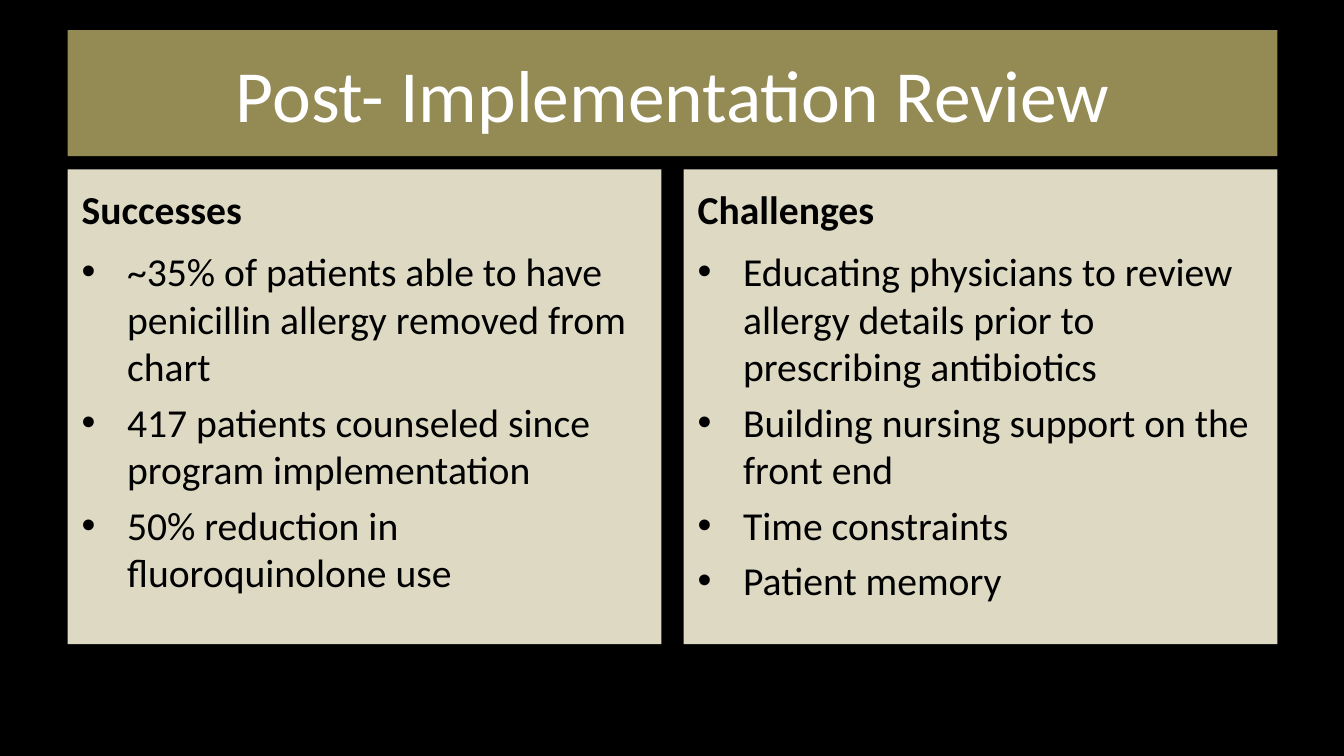
import pptx
import pptx.util
import pptx.dml.color
import pptx.enum.shapes
import pptx.enum.text
import lxml.etree
from pptx.util import Inches, Pt

# Content
TITLE = "Post- Implementation Review"
COLUMNS = [
    ("Successes", [
        "~35% of patients able to have penicillin allergy removed from chart",
        "417 patients counseled since program implementation",
        "50% reduction in fluoroquinolone use",
    ]),
    ("Challenges", [
        "Educating physicians to review allergy details prior to prescribing antibiotics",
        "Building nursing support on the front end",
        "Time constraints",
        "Patient memory",
    ]),
]

# Layout and style
LEFT, WIDTH, GAP = 0.67, 12, 0.22
TITLE_TOP, TITLE_H = 0.3, 1.25
HEAD_TOP, HEAD_H, LIST_H = 1.68, 0.7, 4.01
INDENT = 0.45
BLACK, WHITE, OLIVE, SAND = "000000", "FFFFFF", "948A54", "DDD9C3"
FONT = "Calibri"
ALIGN = pptx.enum.text.PP_ALIGN
ANCHOR = pptx.enum.text.MSO_ANCHOR


def paint(fill, color):
    fill.solid()
    fill.fore_color.rgb = pptx.dml.color.RGBColor.from_string(color)


def add_bullet(p):
    pPr = p._p.get_or_add_pPr()
    pPr.set("marL", str(Inches(INDENT)))
    pPr.set("indent", str(-Inches(INDENT)))
    for tag, attr, value in (("buFont", "typeface", "Arial"), ("buChar", "char", "•")):
        lxml.etree.SubElement(pPr, pptx.oxml.ns.qn("a:" + tag)).set(attr, value)


def add_panel(s, box, text, fill=SAND, color=BLACK, size=28.3, bold=False,
              align=ALIGN.LEFT, anchor=ANCHOR.TOP, before=5.66, bullets=False):
    sp = s.shapes.add_shape(pptx.enum.shapes.MSO_SHAPE.RECTANGLE,
                            *[Inches(v) for v in box])
    sp.shadow.inherit = False
    paint(sp.fill, fill)
    sp.line.fill.background()
    tf = sp.text_frame
    tf.word_wrap = True
    tf.vertical_anchor = anchor
    tf.margin_left = tf.margin_right = Inches(0.14)
    tf.margin_top = tf.margin_bottom = Inches(0.07)
    for i, line in enumerate(text):
        p = tf.add_paragraph() if i else tf.paragraphs[0]
        p.alignment = align
        p.space_before = Pt(before)
        if bullets:
            add_bullet(p)
        r = p.add_run()
        r.text = line
        r.font.name, r.font.size, r.font.bold = FONT, Pt(size), bold
        paint(r.font.fill, color)


prs = pptx.Presentation()
prs.slide_width, prs.slide_height = Inches(13.33), Inches(7.5)
s = prs.slides.add_slide(prs.slide_layouts[6])
paint(s.background.fill, BLACK)

# Title band
add_panel(s, (LEFT, TITLE_TOP, WIDTH, TITLE_H), [TITLE], fill=OLIVE, color=WHITE,
          size=52.5, align=ALIGN.CENTER, anchor=ANCHOR.MIDDLE, before=0)

# Two columns, each a heading over a bulleted list
col_w = (WIDTH - GAP) / len(COLUMNS)
for i, (heading, points) in enumerate(COLUMNS):
    x = LEFT + i * (col_w + GAP)
    add_panel(s, (x, HEAD_TOP, col_w, HEAD_H), [heading], bold=True,
              anchor=ANCHOR.BOTTOM)
    add_panel(s, (x, HEAD_TOP + HEAD_H, col_w, LIST_H), points, bullets=True)

prs.save("out.pptx")
